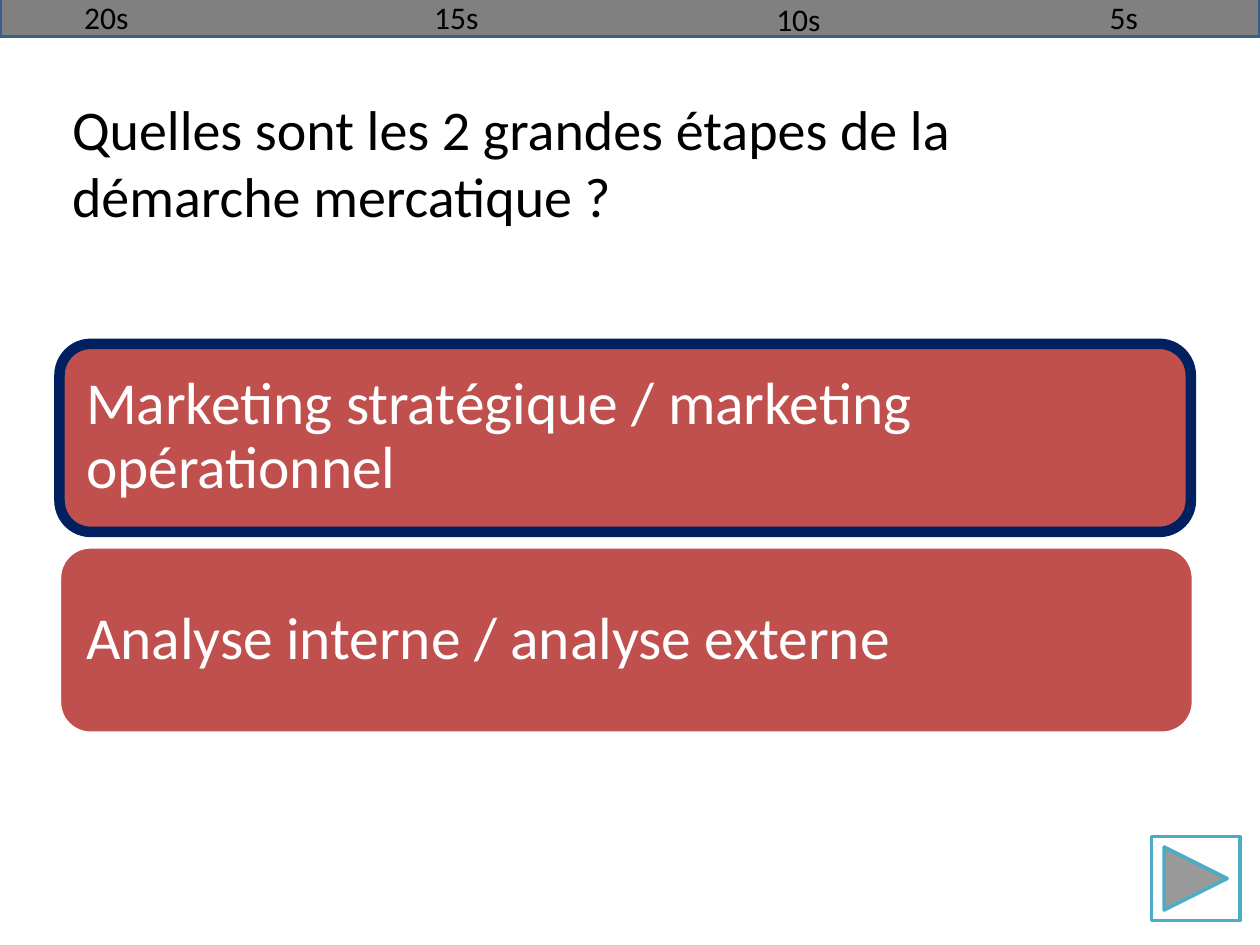
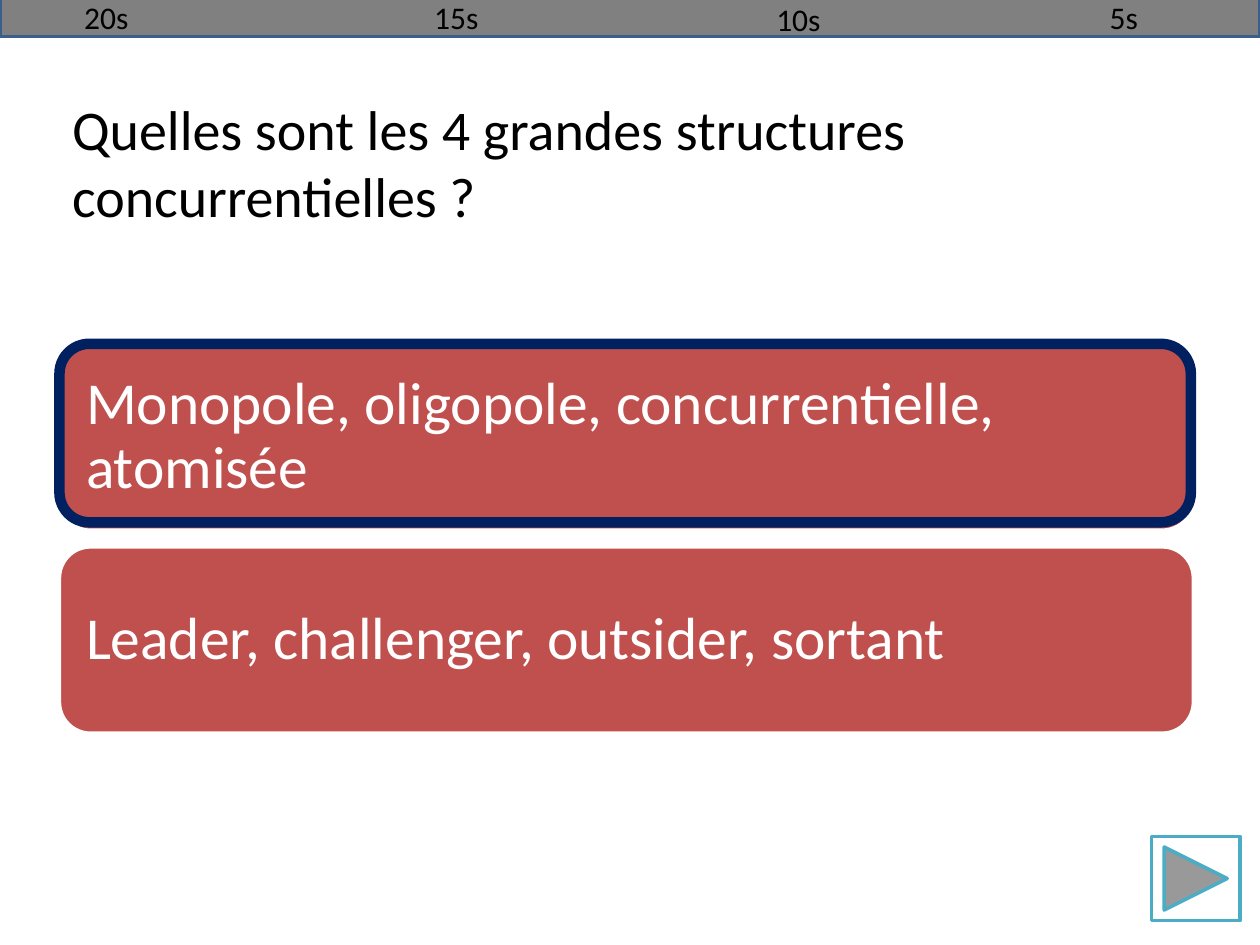
from pptx import Presentation
from pptx import util as u
from pptx.dml.color import RGBColor
from pptx.enum import shapes, text

INK, WHITE, RED, NAVY = "000000", "FFFFFF", "C0504D", "002060"
GREY, STEEL, TEAL = "808080", "3A5F8C", "4BACC6"
LEFT, WIDTH = 34, 648
ANSWER_TOP, ANSWER_HEIGHT, ANSWER_PITCH = 196.5, 106.5, 116
TIMES = [("20s", 41, -4.5, 45.5), ("15s", 241, -4.5, 45.5),
         ("10s", 436.5, -3.5, 45.5), ("5s", 627, -4.5, 34)]
QUESTIONS = [
    ("Quelles sont les 2 grandes étapes de la démarche mercatique ?",
     ["Marketing stratégique / marketing opérationnel",
      "Analyse interne / analyse externe"], 107.5),
    ("Quelles sont les 4 grandes structures concurrentielles ?",
     ["Monopole, oligopole, concurrentielle, atomisée",
      "Leader, challenger, outsider, sortant"], 102),
]


def rgb(value):
    """Turn a hex string into a colour."""
    return RGBColor.from_string(value)


class Quiz:
    """Hold the quiz style and the current slide."""

    font = "Calibri"

    def __init__(self):
        """Open a 10 by 7.5 inch presentation."""
        self.prs = Presentation()
        self.prs.slide_width, self.prs.slide_height = u.Pt(720), u.Pt(540)

    def new_slide(self):
        """Start a title-only slide."""
        self.s = self.prs.slides.add_slide(self.prs.slide_layouts[5])

    def add_words(self, sp, words, size, color, **formats):
        """Put one left-aligned paragraph in a shape."""
        tf = sp.text_frame
        settings = {"word_wrap": True, "auto_size": text.MSO_AUTO_SIZE.NONE,
                    "vertical_anchor": text.MSO_ANCHOR.TOP, **formats}
        for name, value in settings.items():
            setattr(tf, name, value)
        p = tf.paragraphs[0]
        p.alignment = text.PP_ALIGN.LEFT
        r = p.add_run()
        r.text = words
        for name, value in {"name": self.font, "size": u.Pt(size)}.items():
            setattr(r.font, name, value)
        r.font.color.rgb = rgb(color)
        return p

    def shape(self, kind, box, fill, line, width):
        """Draw a preset shape, unfilled when fill is None."""
        sp = self.s.shapes.add_shape(kind, *map(u.Pt, box))
        sp.shadow.inherit = False
        if fill:
            sp.fill.solid()
            sp.fill.fore_color.rgb = rgb(fill)
        else:
            sp.fill.background()
        sp.line.color.rgb = rgb(line)
        sp.line.width = u.Pt(width)
        return sp

    def title(self, words):
        """Place the question in the title placeholder."""
        sp = self.s.shapes.title
        box = {"left": LEFT, "top": 50.5, "width": WIDTH, "height": 88}
        for name, value in box.items():
            setattr(sp, name, u.Pt(value))
        self.add_words(sp, words, 32, INK)

    def answer(self, row, words):
        """Draw one answer panel."""
        box = LEFT, ANSWER_TOP + row * ANSWER_PITCH, WIDTH, ANSWER_HEIGHT
        sp = self.shape(shapes.MSO_SHAPE.ROUNDED_RECTANGLE, box, RED, WHITE, 2)
        sides = ("left", "top", "right", "bottom")
        margins = {f"margin_{side}": u.Pt(10) for side in sides}
        p = self.add_words(sp, words, 34, WHITE,
                           vertical_anchor=text.MSO_ANCHOR.MIDDLE, **margins)
        p.line_spacing = 0.9

    def highlight(self, height):
        """Frame the right answer."""
        self.shape(shapes.MSO_SHAPE.ROUNDED_RECTANGLE,
                   (LEFT, ANSWER_TOP, 646.5, height), None, NAVY, 6)

    def next_button(self):
        """Draw the button that points forward."""
        sp = self.shape(shapes.MSO_SHAPE.ACTION_BUTTON_BACK_OR_PREVIOUS,
                        (658, 478, 50.5, 48), WHITE, TEAL, 2)
        sp.rotation = 180

    def timer(self):
        """Draw the countdown band and its labels."""
        self.shape(shapes.MSO_SHAPE.RECTANGLE, (0, -1.5, 720, 22.5),
                   GREY, STEEL, 2)
        for words, left, top, width in TIMES:
            sp = self.s.shapes.add_textbox(*map(u.Pt, (left, top, width, 29)))
            self.add_words(sp, words, 18, INK)


def main():
    """Build the quiz slides."""
    quiz = Quiz()
    for question, answers, frame_height in QUESTIONS:
        quiz.new_slide()
        quiz.title(question)
        for row, words in enumerate(answers):
            quiz.answer(row, words)
        quiz.highlight(frame_height)
        quiz.next_button()
        quiz.timer()
    quiz.prs.save("out.pptx")


if __name__ == "__main__":
    main()
